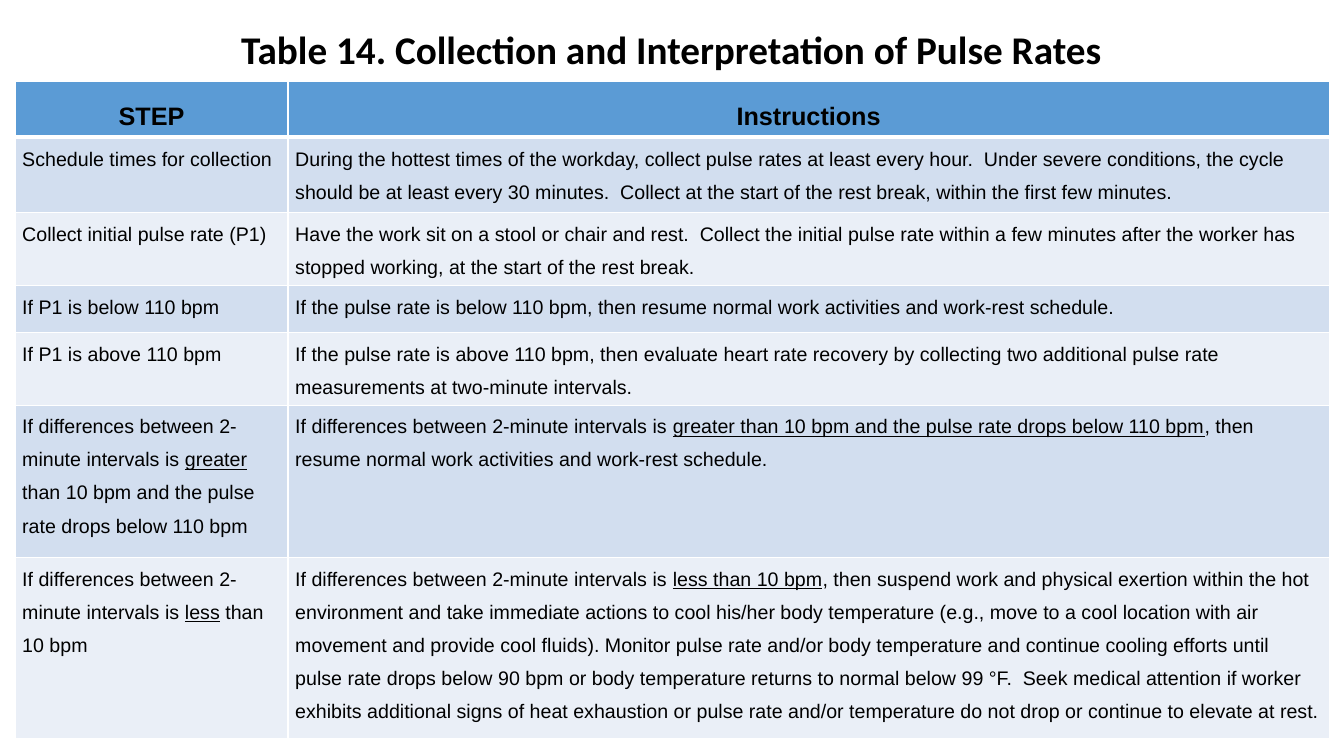
from lxml import etree
from pptx import Presentation
from pptx.dml.color import RGBColor
from pptx.enum.text import MSO_ANCHOR, PP_ALIGN
from pptx.oxml.ns import qn
from pptx.util import Cm, Pt

MIDDLE, TOP = MSO_ANCHOR.MIDDLE, MSO_ANCHOR.TOP
CENTER, LEFT = PP_ALIGN.CENTER, PP_ALIGN.LEFT

BLACK = RGBColor(0x00, 0x00, 0x00)
WHITE = RGBColor(0xFF, 0xFF, 0xFF)
HEADER_BLUE = RGBColor(0x5B, 0x9B, 0xD5)
BANDS = (RGBColor(0xD2, 0xDE, 0xEF), RGBColor(0xEA, 0xEF, 0xF7))

TITLE = "Table 14. Collection and Interpretation of Pulse Rates"
COL_WIDTHS = (6.88, 26.24)
ROW_HEIGHTS = (1.4, 1.9, 1.83, 1.19, 1.83, 3.84, 4.55)

# Underscores enclose underlined words
ROWS = (
    ("STEP", "Instructions"),
    ("Schedule times for collection",
     "During the hottest times of the workday, collect pulse rates at least "
     "every hour.  Under severe conditions, the cycle should be at least every "
     "30 minutes.  Collect at the start of the rest break, within the first "
     "few minutes."),
    ("Collect initial pulse rate (P1)",
     "Have the work sit on a stool or chair and rest.  Collect the initial "
     "pulse rate within a few minutes after the worker has stopped working, "
     "at the start of the rest break."),
    ("If P1 is below 110 bpm",
     "If the pulse rate is below 110 bpm, then resume normal work activities "
     "and work-rest schedule."),
    ("If P1 is above 110 bpm",
     "If the pulse rate is above 110 bpm, then evaluate heart rate recovery by "
     "collecting two additional pulse rate measurements at two-minute "
     "intervals."),
    ("If differences between 2-minute intervals is _greater_ than 10 bpm and "
     "the pulse rate drops below 110 bpm",
     "If differences between 2-minute intervals is _greater than 10 bpm and "
     "the pulse rate drops below 110 bpm_, then resume normal work activities "
     "and work-rest schedule."),
    ("If differences between 2-minute intervals is _less_ than 10 bpm",
     "If differences between 2-minute intervals is _less than 10 bpm_, then "
     "suspend work and physical exertion within the hot environment and take "
     "immediate actions to cool his/her body temperature (e.g., move to a cool "
     "location with air movement and provide cool fluids). Monitor pulse rate "
     "and/or body temperature and continue cooling efforts until pulse rate "
     "drops below 90 bpm or body temperature returns to normal below 99 °F.  "
     "Seek medical attention if worker exhibits additional signs of heat "
     "exhaustion or pulse rate and/or temperature do not drop or continue to "
     "elevate at rest."),
)


def set_attrs(obj, values):
    for name, value in values.items():
        setattr(obj, name, value)


def write(p, text, para, font):
    """Fill a paragraph, underlining the parts between underscores."""
    set_attrs(p, para)
    for i, part in enumerate(text.split("_")):
        r = p.add_run()
        r.text = part
        set_attrs(r.font, font)
        r.font.underline = i % 2 == 1
        r.font.color.rgb = BLACK


def add_title(s):
    tf = s.shapes.add_textbox(Cm(2.31), Cm(0.58), Cm(29.21), Cm(1.47)).text_frame
    set_attrs(tf, {"word_wrap": True, "vertical_anchor": MIDDLE})
    write(tf.paragraphs[0], TITLE, {"alignment": CENTER, "line_spacing": 0.9},
          {"name": "Calibri", "size": Pt(28), "bold": True})


def set_borders(cell, bottom):
    tc_pr = cell._tc.get_or_add_tcPr()
    for side, width in (("L", 1), ("R", 1), ("T", 1), ("B", bottom)):
        ln = etree.SubElement(tc_pr, qn(f"a:ln{side}"), w=str(Pt(width)))
        fill = etree.SubElement(ln, qn("a:solidFill"))
        etree.SubElement(fill, qn("a:srgbClr"), val=str(WHITE))


def format_cell(cell, text, row):
    header = row == 0
    set_attrs(cell, {"margin_left": Cm(0.18), "margin_right": Cm(0.18),
                     "margin_top": 0, "margin_bottom": 0,
                     "vertical_anchor": MIDDLE if header else TOP})
    # Borders come before the fill in the cell properties
    set_borders(cell, 3 if header else 1)
    cell.fill.solid()
    cell.fill.fore_color.rgb = HEADER_BLUE if header else BANDS[(row - 1) % 2]
    write(cell.text_frame.paragraphs[0], text,
          {"alignment": CENTER if header else LEFT, "line_spacing": 1.5,
           "space_before": Pt(6), "space_after": Pt(6)},
          {"name": "Arial", "size": Pt(18 if header else 14), "bold": header})


def add_pulse_table(s):
    table = s.shapes.add_table(
        len(ROWS), len(COL_WIDTHS), Cm(0.38), Cm(2.06),
        Cm(sum(COL_WIDTHS)), Cm(sum(ROW_HEIGHTS))).table
    for col, width in zip(table.columns, COL_WIDTHS):
        col.width = Cm(width)
    for i, (height, texts) in enumerate(zip(ROW_HEIGHTS, ROWS)):
        table.rows[i].height = Cm(height)
        for j, text in enumerate(texts):
            format_cell(table.cell(i, j), text, i)


def main():
    prs = Presentation()
    prs.slide_width, prs.slide_height = Cm(33.87), Cm(19.05)
    s = prs.slides.add_slide(prs.slide_layouts[6])
    add_title(s)
    add_pulse_table(s)
    prs.save("out.pptx")


if __name__ == "__main__":
    main()
